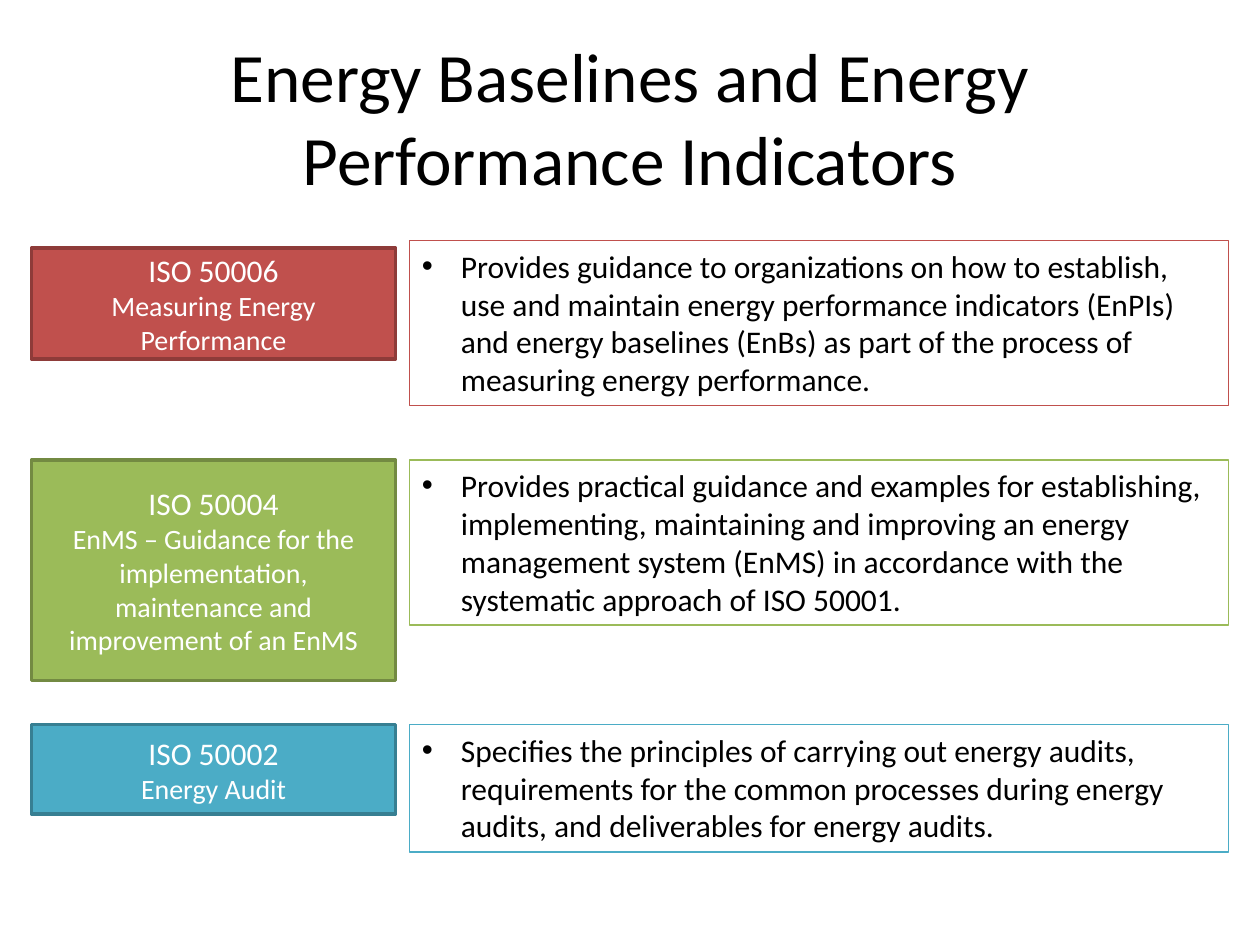
"""Build a slide pairing three ISO energy standards with their descriptions."""
from dataclasses import dataclass
from typing import Optional

from lxml.etree import SubElement
from pptx import Presentation
from pptx.dml.color import RGBColor
from pptx.enum.shapes import MSO_SHAPE
from pptx.enum.text import MSO_ANCHOR, PP_ALIGN
from pptx.oxml.ns import qn
from pptx.util import Emu, Inches, Pt

FONT = "Calibri"
BLACK = RGBColor(0x00, 0x00, 0x00)
WHITE = RGBColor(0xFF, 0xFF, 0xFF)
RED, DARK_RED = RGBColor(0xC0, 0x50, 0x4D), RGBColor(0x8E, 0x3B, 0x39)
GREEN, DARK_GREEN = RGBColor(0x9B, 0xBB, 0x59), RGBColor(0x73, 0x8A, 0x42)
TEAL, DARK_TEAL = RGBColor(0x4B, 0xAC, 0xC6), RGBColor(0x37, 0x7F, 0x92)

SLIDE_WIDTH, SLIDE_HEIGHT = Inches(10), Inches(7.5)
INDENT = Inches(0.31)


@dataclass(frozen=True)
class Column:
    """Left edge and width as shares of the slide's width."""
    left: float
    width: float


@dataclass(frozen=True)
class Span:
    """Top edge and height as shares of the slide's height."""
    top: float
    height: float


@dataclass(frozen=True)
class Standard:
    """A standard's wording, colours and vertical places."""
    code: str
    subject: str
    description: str
    color: RGBColor
    border: RGBColor
    label_span: Span
    detail_span: Span
    detail_fill: Optional[RGBColor] = WHITE
    detail_line: float = 1


LABELS = Column(0.025, 0.289)
DETAILS = Column(0.325, 0.65)

STANDARDS = (
    Standard(
        "ISO 50006", "Measuring Energy Performance",
        "Provides guidance to organizations on how to establish, use and maintain "
        "energy performance indicators (EnPIs) and energy baselines (EnBs) as part "
        "of the process of measuring energy performance.",
        RED, DARK_RED, Span(1.97 / 7.5, 0.88 / 7.5), Span(1.91 / 7.5, 1.31 / 7.5),
        None, 0.75),
    Standard(
        "ISO 50004",
        "EnMS – Guidance for the implementation, maintenance and improvement of an EnMS",
        "Provides practical guidance and examples for establishing, implementing, "
        "maintaining and improving an energy management system (EnMS) in accordance "
        "with the systematic approach of ISO 50001.",
        GREEN, DARK_GREEN, Span(3.65 / 7.5, 1.75 / 7.5), Span(3.65 / 7.5, 1.31 / 7.5)),
    Standard(
        "ISO 50002", "Energy Audit",
        "Specifies the principles of carrying out energy audits, requirements for the "
        "common processes during energy audits, and deliverables for energy audits.",
        TEAL, DARK_TEAL, Span(5.75 / 7.5, 0.71 / 7.5), Span(5.75 / 7.5, 1.01 / 7.5)),
)


def write(para, text: str, size: float, color: RGBColor, align: PP_ALIGN) -> None:
    """Put formatted text in a paragraph."""
    para.text = text
    para.alignment = align
    para.font.name = FONT
    para.font.size = Pt(size)
    para.font.color.rgb = color


def add_box(page, column: Column, span: Span, fill: Optional[RGBColor],
            border: RGBColor, line_width: float, anchor: MSO_ANCHOR):
    """Draw a bordered rectangle and return its text frame."""
    box = page.shapes.add_shape(
        MSO_SHAPE.RECTANGLE,
        Emu(round(column.left * SLIDE_WIDTH)), Emu(round(span.top * SLIDE_HEIGHT)),
        Emu(round(column.width * SLIDE_WIDTH)), Emu(round(span.height * SLIDE_HEIGHT)))
    box.shadow.inherit = False
    if fill is None:
        box.fill.background()
    else:
        box.fill.solid()
        box.fill.fore_color.rgb = fill
    box.line.color.rgb = border
    box.line.width = Pt(line_width)
    frame = box.text_frame
    frame.word_wrap = True
    frame.vertical_anchor = anchor
    return frame


def add_bullet(para) -> None:
    """Give a paragraph a hanging round bullet."""
    properties = para._p.get_or_add_pPr()
    properties.set("marL", str(INDENT))
    properties.set("indent", str(-INDENT))
    SubElement(properties, qn("a:buFont"), typeface="Arial")
    SubElement(properties, qn("a:buChar"), char="•")


def add_standard(page, standard: Standard) -> None:
    """Draw a standard's label and its description."""
    label = add_box(page, LABELS, standard.label_span, standard.color,
                    standard.border, 2, MSO_ANCHOR.MIDDLE)
    label.margin_left = label.margin_right = Inches(0.15)
    write(label.paragraphs[0], standard.code, 18, WHITE, PP_ALIGN.CENTER)
    write(label.add_paragraph(), standard.subject, 16, WHITE, PP_ALIGN.CENTER)

    detail = add_box(page, DETAILS, standard.detail_span, standard.detail_fill,
                     standard.color, standard.detail_line, MSO_ANCHOR.TOP)
    write(detail.paragraphs[0], standard.description, 18, BLACK, PP_ALIGN.LEFT)
    add_bullet(detail.paragraphs[0])


def add_title(page, text: str) -> None:
    """Place and format the slide's title."""
    title = page.shapes.title
    title.left, title.top = round(SLIDE_WIDTH * 0.05), round(SLIDE_HEIGHT * 0.04)
    title.width, title.height = round(SLIDE_WIDTH * 0.9), round(SLIDE_HEIGHT / 6)
    title.text_frame.word_wrap = True
    title.text_frame.vertical_anchor = MSO_ANCHOR.MIDDLE
    write(title.text_frame.paragraphs[0], text, 39.6, BLACK, PP_ALIGN.CENTER)


def main() -> None:
    """Build and save the deck."""
    deck = Presentation()
    deck.slide_width, deck.slide_height = SLIDE_WIDTH, SLIDE_HEIGHT
    page = deck.slides.add_slide(deck.slide_layouts.get_by_name("Title Only"))
    add_title(page, "Energy Baselines and Energy Performance Indicators")
    for standard in STANDARDS:
        add_standard(page, standard)
    deck.save("out.pptx")


if __name__ == "__main__":
    main()
